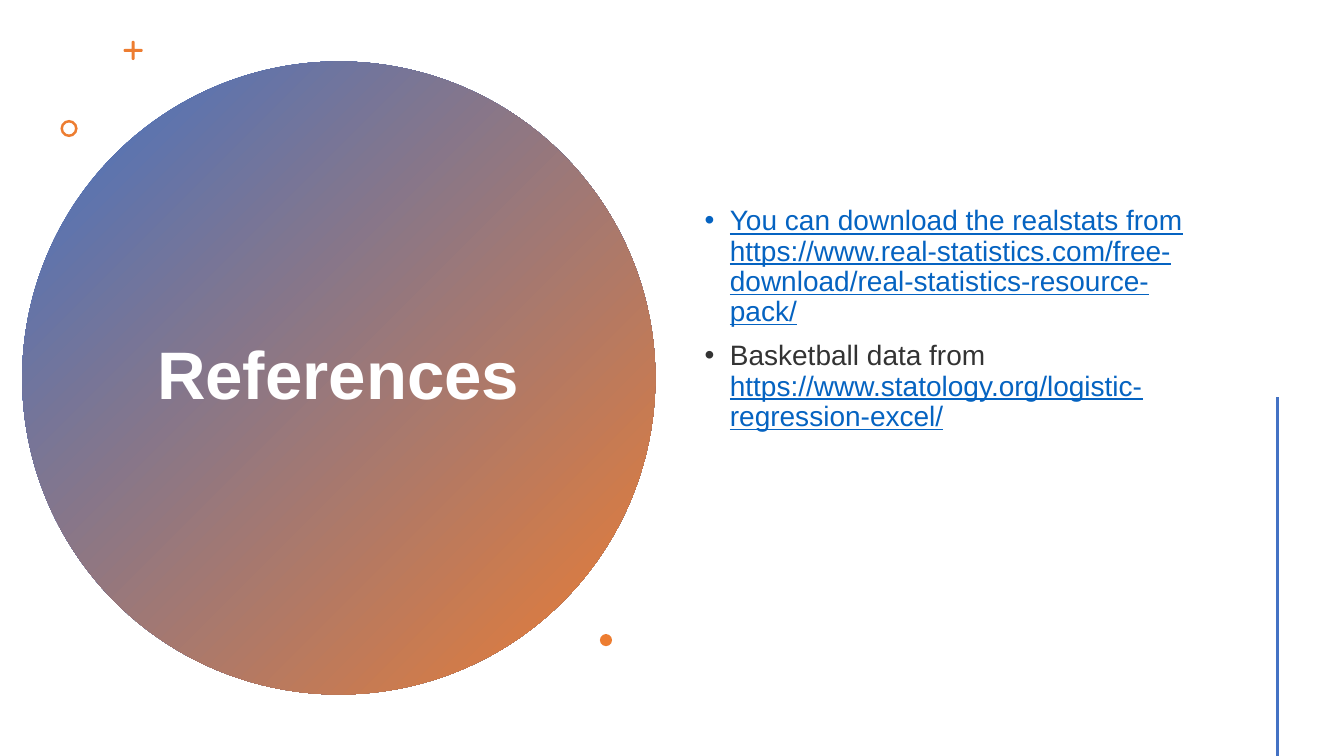
from dataclasses import dataclass
from math import cos, pi, sin

from lxml.etree import SubElement
from pptx import Presentation
from pptx.dml.color import RGBColor
from pptx.enum.shapes import MSO_CONNECTOR, MSO_SHAPE
from pptx.enum.text import MSO_ANCHOR, PP_ALIGN
from pptx.oxml.ns import qn
from pptx.shapes.autoshape import Shape
from pptx.slide import Slide
from pptx.text.text import TextFrame, _Paragraph
from pptx.util import Inches, Pt


@dataclass(frozen=True)
class Theme:
    font: str = "Arial"
    blue: RGBColor = RGBColor(0x44, 0x72, 0xC4)
    orange: RGBColor = RGBColor(0xED, 0x7D, 0x31)
    white: RGBColor = RGBColor(0xFF, 0xFF, 0xFF)
    ink: RGBColor = RGBColor(0x33, 0x33, 0x33)
    link: RGBColor = RGBColor(0x05, 0x63, 0xC1)
    title_size: Pt = Pt(48)
    body_size: Pt = Pt(20)
    line_width: Pt = Pt(2)


THEME = Theme()


@dataclass(frozen=True)
class Area:
    left: float
    top: float
    width: float
    height: float

    def lengths(self) -> list[Inches]:
        return [Inches(n) for n in (self.left, self.top, self.width, self.height)]


@dataclass(frozen=True)
class Span:
    text: str
    linked: bool = False


REFERENCES = [
    [Span("You can download the realstats from "
          "https://www.real-statistics.com/free-download/real-statistics-resource-pack/", True)],
    [Span("Basketball data from "),
     Span("https://www.statology.org/logistic-regression-excel/", True)],
]


def set_all(target: object, values: dict) -> None:
    for name, value in values.items():
        setattr(target, name, value)


def paint(shape: Shape) -> None:
    shape.shadow.inherit = False
    shape.line.fill.background()
    shape.fill.solid()
    shape.fill.fore_color.rgb = THEME.orange


def add_mark(page: Slide, kind: MSO_SHAPE, area: Area) -> Shape:
    mark = page.shapes.add_shape(kind, *area.lengths())
    paint(mark)
    return mark


def add_disc(page: Slide) -> None:
    disc = add_mark(page, MSO_SHAPE.OVAL, Area(0.22, 0.61, 6.28, 6.28))
    disc.fill.gradient()
    disc.fill.gradient_angle = 315
    for stop, position, color in zip(disc.fill.gradient_stops, (0, 1), (THEME.blue, THEME.orange)):
        stop.position = position
        stop.color.rgb = color


def add_plus(page: Slide, x: float, y: float, reach: float, half: float) -> None:
    """Draw a plus with rounded ends, centred on x and y."""
    points = []
    for arm in range(4):
        turn = arm * pi / 2
        outline = [(reach - half + half * cos(a), half * sin(a))
                   for a in (step * pi / 8 for step in range(-4, 5))] + [(half, half)]
        points += [(Inches(x + u * cos(turn) - v * sin(turn)),
                    Inches(y + u * sin(turn) + v * cos(turn))) for u, v in outline]
    builder = page.shapes.build_freeform(*points[0])
    builder.add_line_segments(points[1:], close=True)
    paint(builder.convert_to_shape())


def add_text_box(page: Slide, area: Area, anchor: MSO_ANCHOR) -> TextFrame:
    frame = page.shapes.add_textbox(*area.lengths()).text_frame
    set_all(frame, {"word_wrap": True, "vertical_anchor": anchor})
    return frame


def add_span(para: _Paragraph, text: str, color: RGBColor, values: dict) -> None:
    run = para.add_run()
    run.text = text
    set_all(run.font, {"name": THEME.font, **values})
    run.font.color.rgb = color


def add_title(page: Slide) -> None:
    frame = add_text_box(page, Area(1.36, 1.41, 3.99, 4.67), MSO_ANCHOR.MIDDLE)
    para = frame.paragraphs[0]
    set_all(para, {"alignment": PP_ALIGN.CENTER, "line_spacing": 0.9})
    add_span(para, "References", THEME.white, {"size": THEME.title_size, "bold": True})


def add_references(page: Slide) -> None:
    frame = add_text_box(page, Area(6.89, 0.57, 5.22, 6.38), MSO_ANCHOR.TOP)
    frame.margin_top = Inches(1.48)
    for index, spans in enumerate(REFERENCES):
        para = frame.add_paragraph() if index else frame.paragraphs[0]
        set_all(para, {"line_spacing": 0.9, "space_before": Pt(10 if index else 0)})
        properties = para._p.get_or_add_pPr()
        properties.set("marL", str(Inches(0.25)))
        properties.set("indent", str(Inches(-0.25)))
        SubElement(properties, qn("a:buFont")).set("typeface", THEME.font)
        SubElement(properties, qn("a:buChar")).set("char", "•")
        for span in spans:
            add_span(para, span.text, THEME.link if span.linked else THEME.ink,
                     {"size": THEME.body_size, "underline": span.linked})


def add_side_line(page: Slide) -> None:
    ends = [Inches(n) for n in (12.67, 3.94, 12.67, 7.5)]
    line = page.shapes.add_connector(MSO_CONNECTOR.STRAIGHT, *ends)
    line.line.color.rgb = THEME.blue
    line.line.width = THEME.line_width
    SubElement(line._element.spPr, qn("a:effectLst"))


def main() -> None:
    deck = Presentation()
    set_all(deck, {"slide_width": Inches(13.33), "slide_height": Inches(7.5)})
    page = deck.slides.add_slide(deck.slide_layouts[6])
    add_disc(page)
    add_title(page)
    add_plus(page, 1.32, 0.5, reach=0.095, half=0.015)
    ring = add_mark(page, MSO_SHAPE.DONUT, Area(0.6, 1.19, 0.17, 0.17))
    ring.adjustments[0] = 0.15
    add_references(page)
    add_mark(page, MSO_SHAPE.OVAL, Area(5.95, 6.29, 0.12, 0.12))
    add_side_line(page)
    deck.save("out.pptx")


if __name__ == "__main__":
    main()
